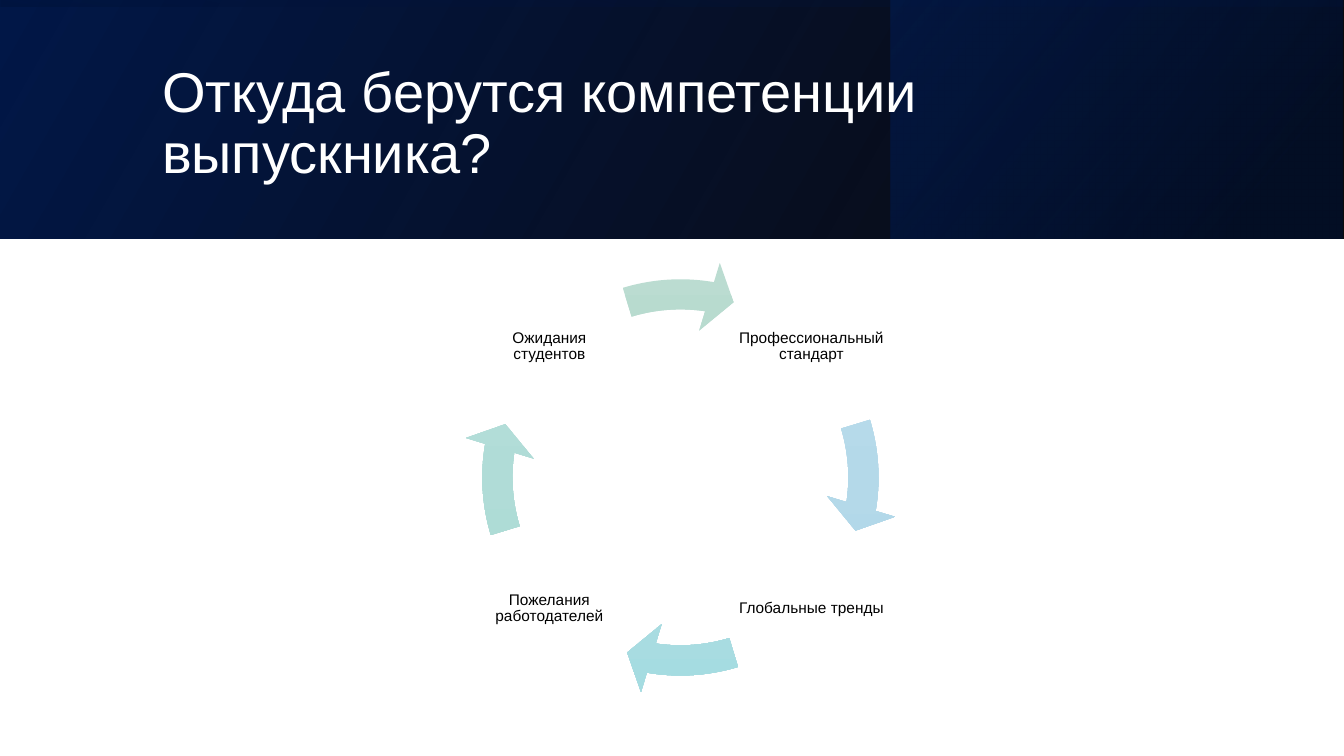
from lxml import etree
from pptx import Presentation
from pptx.dml.color import RGBColor
from pptx.enum.shapes import MSO_SHAPE
from pptx.enum.text import MSO_ANCHOR, PP_ALIGN
from pptx.oxml.ns import qn
from pptx.util import Pt

RECT, ARROW = MSO_SHAPE.RECTANGLE, MSO_SHAPE.CIRCULAR_ARROW
MIDDLE = MSO_ANCHOR.MIDDLE
LEFT, CENTER = PP_ALIGN.LEFT, PP_ALIGN.CENTER

# Content
TITLE = "Откуда берутся компетенции выпускника?"
STEPS = [  # label, column, row, arrow gradient; clockwise from top right
    ("Профессиональный стандарт", 1, -1, ("C2E0EE", "B4D9E9", "A8D5E8")),
    ("Глобальные тренды", 1, 1, ("BFE4E8", "B2DEE3", "A5DCE1")),
    ("Пожелания работодателей", -1, 1, ("BDE3DE", "B0DCD7", "A2DAD3")),
    ("Ожидания студентов", -1, -1, ("BBDCD1", "AED5C8", "A1D2C1")),
]

# Colours and sizes, in points
WHITE = RGBColor(255, 255, 255)
BLACK = RGBColor(0, 0, 0)
FONT = "Arial"
SLIDE_W, SLIDE_H = 960, 540
BAND_H = 170.6
PANEL_X, PANEL_W = 636.5, 322.6
CENTER_X, CENTER_Y = 486, 341
RING, LABEL, LABEL_OFFSET = 312, 110, 93.6

# Arrow angles: 0.6 adjustment units make one degree
QUARTER, FULL_TURN = 54, 216
HEAD_END, TAIL_START = 5.49, 205.86

# Layers of the band: left, top, width, height, rotation, angle, stops
BAND_LAYERS = [
    (0, 0, SLIDE_W, BAND_H, 0, 330,
     [(0, "000000", 96), (100, "001848", 100)]),
    (PANEL_X, 0, PANEL_W, BAND_H, 0, 320,
     [(19, "001030", 68), (100, "002060", 48)]),
    ((SLIDE_W - BAND_H) / 2, (BAND_H - SLIDE_W) / 2, BAND_H, SLIDE_W, 270, 350,
     [(23, "001848", 16), (99, "000000", 45)]),
]


def set_gradient(sp, stops, angle):
    """Fill with (position %, colour, opacity %) stops."""
    grad = etree.Element(qn("a:gradFill"), rotWithShape="1")
    stop_list = etree.SubElement(grad, qn("a:gsLst"))
    for position, color, opacity in stops:
        gs = etree.SubElement(stop_list, qn("a:gs"), pos=str(position * 1000))
        clr = etree.SubElement(gs, qn("a:srgbClr"), val=color)
        if opacity < 100:
            etree.SubElement(clr, qn("a:alpha"), val=str(opacity * 1000))
    etree.SubElement(grad, qn("a:lin"), ang=str(angle * 60000), scaled="0")
    sp._element.spPr.find(qn("a:prstGeom")).addnext(grad)


def add_gradient_shape(kind, x, y, w, h, stops, angle):
    sp = slide.shapes.add_shape(kind, Pt(x), Pt(y), Pt(w), Pt(h))
    sp.shadow.inherit = False
    sp.line.fill.background()
    set_gradient(sp, stops, angle)
    return sp


def add_text(text, x, y, w, h, size, color, align, inset_x, inset_y):
    tf = slide.shapes.add_textbox(Pt(x), Pt(y), Pt(w), Pt(h)).text_frame
    tf.word_wrap = True
    tf.vertical_anchor = MIDDLE
    tf.margin_left = tf.margin_right = Pt(inset_x)
    tf.margin_top = tf.margin_bottom = Pt(inset_y)
    p = tf.paragraphs[0]
    p.alignment = align
    p.line_spacing = 0.9
    r = p.add_run()
    r.text = text
    r.font.name = FONT
    r.font.size = Pt(size)
    r.font.color.rgb = color


prs = Presentation()
prs.slide_width, prs.slide_height = Pt(SLIDE_W), Pt(SLIDE_H)
slide = prs.slides.add_slide(prs.slide_layouts[6])

# Title band
for x, y, w, h, rotation, angle, stops in BAND_LAYERS:
    layer = add_gradient_shape(RECT, x, y, w, h, stops, angle)
    layer.rotation = rotation
    layer._element.spPr.find(qn("a:xfrm")).set("flipH", "1")
add_text(TITLE, 108.7, 27.4, 765.4, 123.8, 40, WHITE, LEFT, 7.2, 3.6)

# Cycle of labels and arrows
for i, (label, column, row, colors) in enumerate(STEPS):
    add_text(label,
             CENTER_X + column * LABEL_OFFSET - LABEL / 2,
             CENTER_Y + row * LABEL_OFFSET - LABEL / 2,
             LABEL, LABEL, 11, BLACK, CENTER, 1.4, 1.4)
    stops = [(50 * n, color, 100) for n, color in enumerate(colors)]
    arrow = add_gradient_shape(ARROW, CENTER_X - RING / 2, CENTER_Y - RING / 2,
                               RING, RING, stops, 90)
    turn = i * QUARTER
    adjustments = (0.069, 4.655, HEAD_END + turn,
                   (TAIL_START + turn) % FULL_TURN, 0.081)
    for n, value in enumerate(adjustments):
        arrow.adjustments[n] = value

prs.save("out.pptx")
